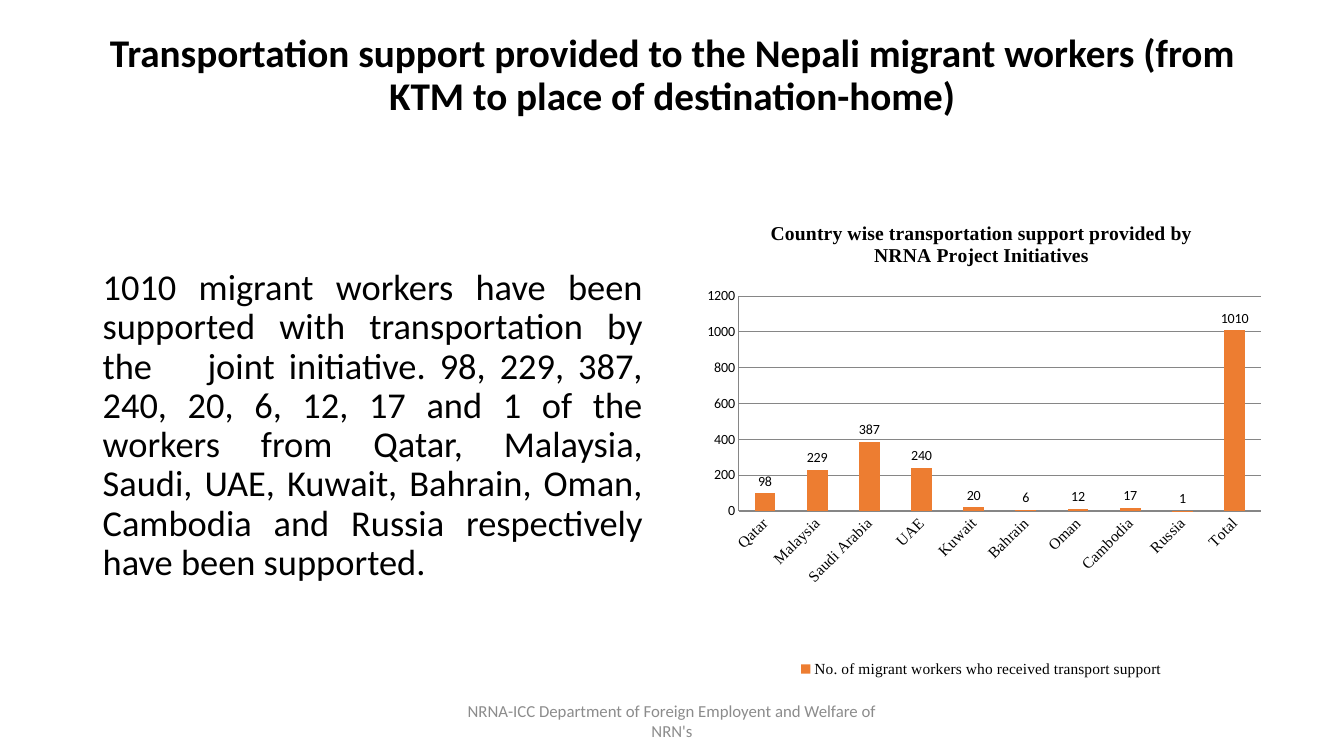
"""Build the slide on transportation support for Nepali migrant workers."""
from dataclasses import dataclass
from lxml.etree import SubElement
from pptx import Presentation
from pptx.chart.data import CategoryChartData
from pptx.dml.color import RGBColor
from pptx.enum.chart import XL_CHART_TYPE as ChartType, XL_LABEL_POSITION as LabelSpot
from pptx.enum.chart import XL_LEGEND_POSITION as LegendSpot, XL_TICK_MARK as Tick
from pptx.enum.text import MSO_ANCHOR as Anchor, PP_ALIGN as Align
from pptx.oxml.ns import qn
from pptx.util import Inches, Pt

HEADLINE = ("Transportation support provided to the Nepali migrant workers "
            "(from KTM to place of destination-home)")
SUMMARY = ("1010 migrant workers have been supported with transportation by the\tjoint "
           "initiative. 98, 229, 387, 240, 20, 6, 12, 17 and 1 of the workers from Qatar, "
           "Malaysia, Saudi, UAE, Kuwait, Bahrain, Oman, Cambodia and Russia respectively "
           "have been supported.")
FOOTER = "NRNA-ICC Department of Foreign Employent and Welfare of NRN's"
CHART_TITLE = "Country wise transportation support provided by NRNA Project Initiatives"
MEASURE = "No. of migrant workers who received transport support"
SUPPORTED = {"Qatar": 98, "Malaysia": 229, "Saudi Arabia": 387, "UAE": 240, "Kuwait": 20,
             "Bahrain": 6, "Oman": 12, "Cambodia": 17, "Russia": 1, "Total": 1010}


@dataclass(frozen=True)
class Theme:
    """Colours, fonts and type sizes of the slide."""
    ink: RGBColor = RGBColor(0, 0, 0)
    muted: RGBColor = RGBColor(0x8C, 0x8C, 0x8C)
    rule: RGBColor = RGBColor(0x86, 0x86, 0x86)
    bar: RGBColor = RGBColor(0xED, 0x7D, 0x31)
    sans: str = "Calibri"
    serif: str = "Times New Roman"
    headline: int = 28
    summary: int = 26
    chart_title: int = 14
    footer: int = 12
    category: int = 11
    value: int = 10


THEME = Theme()
WIDTH, HEIGHT = 13.33, 7.5
MARGIN, GUTTER = 0.92, 0.37
COLUMN = (WIDTH - 2 * MARGIN - GUTTER) / 2
CHART_LEFT = MARGIN + COLUMN + GUTTER
FOOTER_WIDTH = 4.5
PLOT = {"x": 0.083, "y": 0.197, "w": 0.897, "h": 0.448}


def style(font, size, face, color=THEME.ink, bold=False):
    font.size, font.name, font.bold = Pt(size), face, bold
    font.color.rgb = color


def add_text(slide, box, text, size, align, anchor, color=THEME.ink, bold=False, spacing=0.9):
    frame = slide.shapes.add_textbox(*map(Inches, box)).text_frame
    frame.word_wrap, frame.vertical_anchor = True, anchor
    frame.text = text
    paragraph = frame.paragraphs[0]
    paragraph.alignment, paragraph.line_spacing = align, spacing
    style(paragraph.runs[0].font, size, THEME.sans, color, bold)
    return paragraph


def place_plot(chart):
    plot_area = chart._chartSpace.chart.plotArea
    layout = plot_area.find(qn("c:layout"))
    if layout is None:
        layout = SubElement(plot_area, qn("c:layout"))
        plot_area.insert(0, layout)
    manual = SubElement(layout, qn("c:manualLayout"))
    settings = {"layoutTarget": "inner", "xMode": "edge", "yMode": "edge", **PLOT}
    for tag, value in settings.items():
        SubElement(manual, qn(f"c:{tag}")).set("val", str(value))


def add_support_chart(slide, box):
    data = CategoryChartData()
    data.categories = list(SUPPORTED)
    data.add_series(MEASURE, list(SUPPORTED.values()))
    chart = slide.shapes.add_chart(ChartType.COLUMN_CLUSTERED, *map(Inches, box), data).chart
    style(chart.font, THEME.value, THEME.sans)
    place_plot(chart)

    chart.has_title = True
    chart.chart_title.text_frame.text = CHART_TITLE
    heading = chart.chart_title.text_frame.paragraphs[0].runs[0]
    style(heading.font, THEME.chart_title, THEME.serif, bold=True)

    chart.has_legend = True
    chart.legend.position = LegendSpot.BOTTOM
    chart.legend.include_in_layout = False
    style(chart.legend.font, THEME.category, THEME.serif)

    countries, workers = chart.category_axis, chart.value_axis
    for axis in (countries, workers):
        axis.major_tick_mark = axis.minor_tick_mark = Tick.NONE
        axis.format.line.color.rgb = THEME.rule
    style(countries.tick_labels.font, THEME.category, THEME.serif)
    countries.tick_labels.font._element.getparent().getparent().getparent().find(
        qn("a:bodyPr")).set("rot", str(-45 * 60000))
    style(workers.tick_labels.font, THEME.value, THEME.sans)
    workers.minimum_scale, workers.maximum_scale, workers.major_unit = 0, 1200, 200
    workers.major_gridlines.format.line.color.rgb = THEME.rule

    bars = chart.plots[0]
    bars.gap_width, bars.vary_by_categories = 150, False
    fill = bars.series[0].format.fill
    fill.solid()
    fill.fore_color.rgb = THEME.bar
    bars.has_data_labels = True
    bars.data_labels.show_value = True
    bars.data_labels.position = LabelSpot.OUTSIDE_END
    style(bars.data_labels.font, THEME.value, THEME.sans)


def main():
    deck = Presentation()
    deck.slide_width, deck.slide_height = Inches(WIDTH), Inches(HEIGHT)
    slide = deck.slides.add_slide(deck.slide_layouts[6])
    add_text(slide, (MARGIN, 0, WIDTH - 2 * MARGIN, 1.51), HEADLINE, THEME.headline,
             Align.CENTER, Anchor.MIDDLE, bold=True)
    summary = add_text(slide, (MARGIN, 2.62, COLUMN, 4.02), SUMMARY, THEME.summary,
                       Align.JUSTIFY, Anchor.TOP)
    stops = SubElement(summary._p.get_or_add_pPr(), qn("a:tabLst"))
    SubElement(stops, qn("a:tab"), pos=str(Inches(1.04)), algn="l")
    add_support_chart(slide, (CHART_LEFT, 2, COLUMN + 0.21, 4.76))
    add_text(slide, ((WIDTH - FOOTER_WIDTH) / 2, 6.95, FOOTER_WIDTH, 0.4), FOOTER,
             THEME.footer, Align.CENTER, Anchor.MIDDLE, THEME.muted, spacing=1.0)
    deck.save("out.pptx")


if __name__ == "__main__":
    main()
